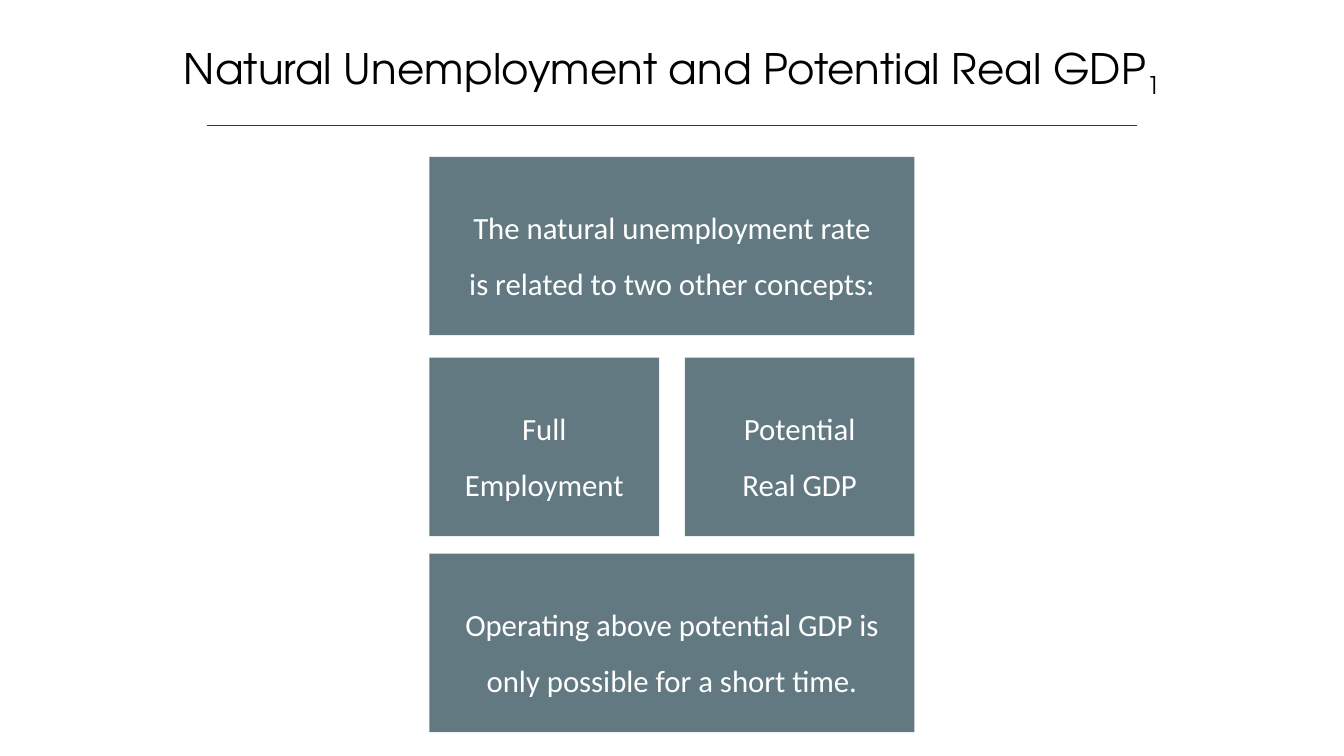
from pptx import Presentation
from pptx.dml.color import RGBColor
from pptx.enum.shapes import MSO_CONNECTOR, MSO_SHAPE
from pptx.enum.text import MSO_ANCHOR, PP_ALIGN
from pptx.oxml.ns import qn
from pptx.util import Pt
from lxml.etree import SubElement

BLACK = RGBColor(0x00, 0x00, 0x00)
WHITE = RGBColor(0xFF, 0xFF, 0xFF)
SLATE = RGBColor(0x62, 0x79, 0x81)
RULE = RGBColor(0x32, 0x35, 0x42)

deck = Presentation()
deck.slide_width, deck.slide_height = Pt(960), Pt(540)
page = deck.slides.add_slide(deck.slide_layouts[6])

# Title with subscript number
title = page.shapes.add_textbox(Pt(120), Pt(26.6), Pt(720), Pt(44))
title.text_frame.word_wrap = True
para = title.text_frame.paragraphs[0]
para.alignment = PP_ALIGN.CENTER
para.font.name, para.font.size = "TeX Gyre Adventor", Pt(30)
para.font.color.rgb = BLACK
para.add_run().text = "Natural Unemployment and Potential Real GDP"
subscript = para.add_run()
subscript.text = "1"
subscript.font._element.set("baseline", "-25000")

# Rule under the title
rule = page.shapes.add_connector(
    MSO_CONNECTOR.STRAIGHT, Pt(148), Pt(89.5), Pt(812), Pt(89.5))
rule.line.color.rgb = RULE
rule.line.width = Pt(1)
SubElement(rule._element.spPr, qn("a:effectLst"))

# Cards: two full-width ones around a pair of half-width ones
LEFT, FULL, HALF, HEIGHT = 306.8, 346.4, 164, 127.5
RIGHT = LEFT + FULL - HALF
cards = [
    (LEFT, 112, FULL, "The natural unemployment rate is related to two other concepts:"),
    (LEFT, 255.5, HALF, "Full Employment"),
    (RIGHT, 255.5, HALF, "Potential Real GDP"),
    (LEFT, 395.5, FULL, "Operating above potential GDP is only possible for a short time."),
]
for left, top, width, words in cards:
    card = page.shapes.add_shape(
        MSO_SHAPE.RECTANGLE, Pt(left), Pt(top), Pt(width), Pt(HEIGHT))
    card.shadow.inherit = False
    card.fill.solid()
    card.fill.fore_color.rgb = SLATE
    card.line.fill.background()
    frame = card.text_frame
    frame.word_wrap = True
    frame.vertical_anchor = MSO_ANCHOR.MIDDLE
    frame.margin_left = frame.margin_right = Pt(23.8)
    para = frame.paragraphs[0]
    para.text = words
    para.alignment = PP_ALIGN.CENTER
    para.line_spacing = 1.5
    para.font.name, para.font.size = "Calibri", Pt(22)
    para.font.color.rgb = WHITE

deck.save("out.pptx")
